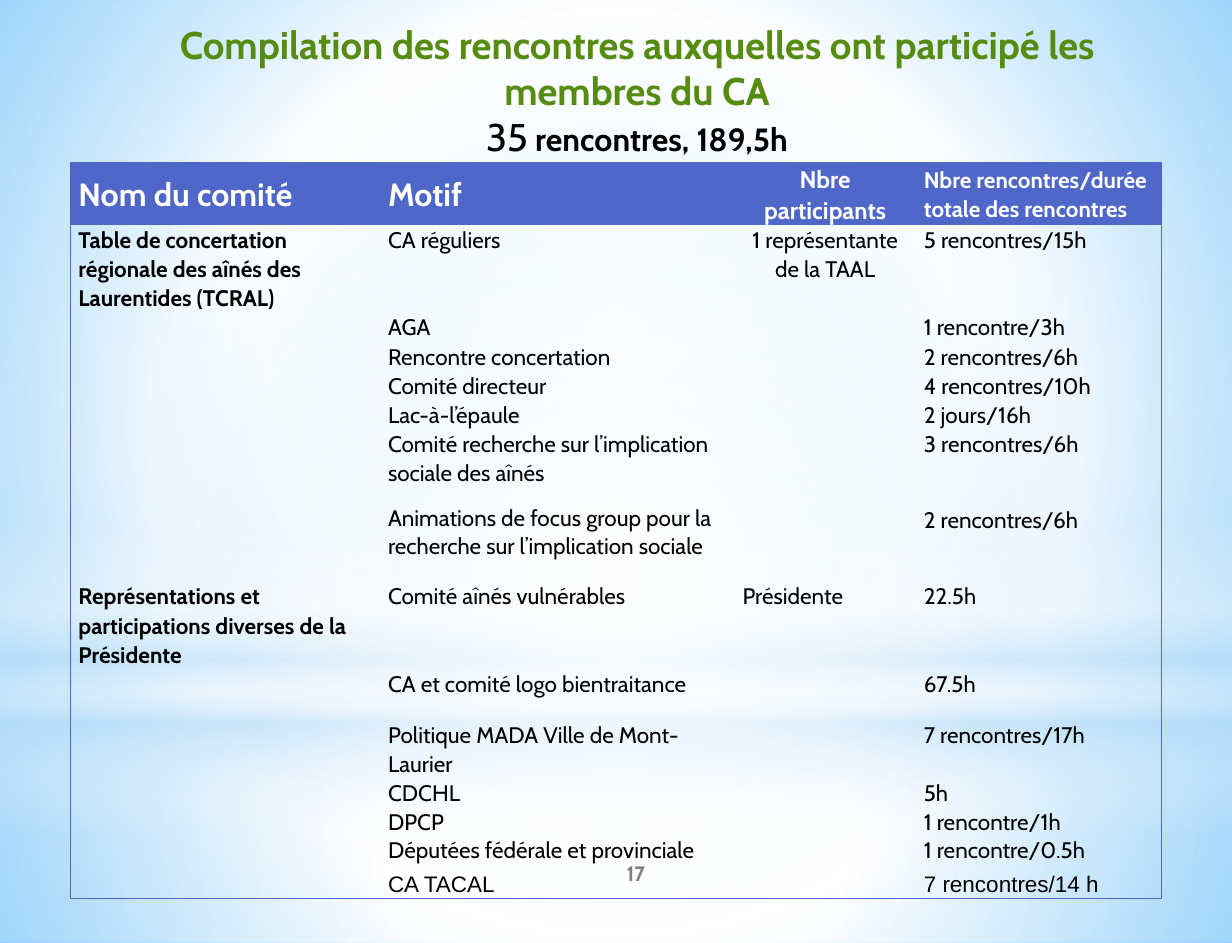
from lxml.etree import SubElement
from pptx import Presentation
from pptx.dml.color import RGBColor
from pptx.enum.shapes import MSO_SHAPE
from pptx.enum.text import MSO_ANCHOR, PP_ALIGN
from pptx.oxml.ns import qn
from pptx.util import Pt

WIDTH, HEIGHT = 768, 588
BLUE, GREEN, BLACK, WHITE, GREY = "4E67C8", "568C11", "000000", "FFFFFF", "7F7F7F"
PLAIN_TABLE = "{2D5ABB26-0587-4C30-8999-92F81FD0307C}"

TITLE = [
    ("Compilation des rencontres auxquelles ont participé les membres du CA\v",
     {"size": 24, "color": GREEN, "bold": True}),
    ("35", {"size": 24}),
    (" rencontres, 189,5h", {"size": 20, "bold": True}),
]
PAGE_NUMBER = [("17", {"size": 13, "color": GREY, "bold": True})]

HEADERS = ["Nom du comité", "Motif", "Nbre participants",
           "Nbre rencontres/durée totale des rencontres"]
HEADER_SIZES = [20, 20, 15, 14]
COLUMN_WIDTHS = [193, 221, 113, 153.4]

MEETINGS = [
    (54.6, "Table de concertation régionale des aînés des Laurentides (TCRAL)",
     "CA réguliers", "1 représentante de la TAAL", "5 rencontres/15h"),
    (18.2, "", "AGA", "", "1 rencontre/3h"),
    (18.2, "", "Rencontre concertation", "", "2 rencontres/6h"),
    (18.2, "", "Comité directeur", "", "4 rencontres/10h"),
    (18.2, "", "Lac-à-l’épaule", "", "2 jours/16h"),
    (47.5, "", "Comité recherche sur l’implication sociale des aînés", "", "3 rencontres/6h"),
    (47.5, "", "Animations de focus group pour la recherche sur l’implication sociale",
     "", "2 rencontres/6h"),
    (54.6, "Représentations et participations diverses de la Présidente",
     "Comité aînés vulnérables", "Présidente", "22.5h"),
    (31.7, "", "CA et comité logo bientraitance", "", "67.5h"),
    (36.4, "", "Politique MADA Ville de Mont-Laurier", "", "7 rencontres/17h"),
    (18.2, "", "CDCHL", "", "5h"),
    (18.2, "", "DPCP", "", "1 rencontre/1h"),
    (20.9, "", "Députées fédérale et provinciale", "", "1 rencontre/0.5h"),
    (17.2, "", "CA TACAL", "", "7 rencontres/14 h"),
]
HEADER_HEIGHT = 38.6
SINGLE_SPACED = {(7, 1), (13, 1), (13, 3)}
CENTERED = {(0, 2), (1, 2)}

BACKDROP = [(0, "99D4FE", 100), (60, WHITE, 100), (100, "54BDFF", 100)]
LAYERS = [
    (MSO_SHAPE.RECTANGLE, 438, 150, None,
     [(0, WHITE, 91), (37, WHITE, 76), (100, "B4DCFA", 79)]),
    (MSO_SHAPE.RECTANGLE, 0, 438, None,
     [(0, WHITE, 89), (48, WHITE, 62), (100, "B4DCFA", 79)]),
    (MSO_SHAPE.RECTANGLE, 323.3, 195.8, 90,
     [(0, WHITE, 0), (29, WHITE, 30), (45, "B4DCFA", 40),
      (55, WHITE, 26), (65, "B4DCFA", 60), (100, WHITE, 0)]),
    (MSO_SHAPE.OVAL, 137.5, 438, None,
     [(0, WHITE, 100), (56, WHITE, 0), (100, WHITE, 0)]),
]


def rgb(color):
    return RGBColor.from_string(color)


def node(parent, tag, **values):
    return SubElement(parent, qn("a:" + tag), {k: str(v) for k, v in values.items()})


def assign(target, values):
    for name, value in values.items():
        setattr(target, name, value)


def set_gradient(owner, fill, stops, angle=None):
    fill.gradient()
    gradient = next(owner.element.iter(qn("a:gradFill")))
    for child in list(gradient):
        gradient.remove(child)
    stop_list = node(gradient, "gsLst")
    for position, color, opacity in stops:
        stop = node(stop_list, "gs", pos=position * 1000)
        shade = node(stop, "srgbClr", val=color)
        if opacity < 100:
            node(shade, "alpha", val=opacity * 1000)
    if angle is None:
        node(node(gradient, "path", path="circle"), "fillToRect",
             l=50000, t=50000, r=50000, b=50000)
    else:
        node(gradient, "lin", ang=angle * 60000, scaled=0)


def write(para, spans):
    for text, look in spans:
        if text.endswith("\v"):
            text, ends_line = text[:-1], True
        else:
            ends_line = False
        span = para.add_run()
        span.text = text
        assign(span.font, {"name": look.get("font", "Cabin"),
                           "size": Pt(look["size"]),
                           "bold": look.get("bold", False)})
        span.font.color.rgb = rgb(look.get("color", BLACK))
        if ends_line:
            para.add_line_break()


def add_text(page, place, spans, anchor):
    frame = page.shapes.add_textbox(*map(Pt, place)).text_frame
    assign(frame, {"word_wrap": True, "vertical_anchor": anchor,
                   "margin_left": Pt(7.9), "margin_right": Pt(7.9),
                   "margin_top": Pt(3.6), "margin_bottom": Pt(3.6)})
    para = frame.paragraphs[0]
    para.alignment = PP_ALIGN.CENTER
    write(para, spans)


def set_borders(cell, row, column, last_row, last_column):
    edges = {"lnL": column == 0, "lnR": column == last_column,
             "lnT": row == 0, "lnB": row % 2 == 0 or row == last_row}
    properties = cell._tc.get_or_add_tcPr()
    for tag, shown in edges.items():
        line = node(properties, tag, w=Pt(0.75))
        if shown:
            node(node(line, "solidFill"), "srgbClr", val=BLUE)
        else:
            node(line, "noFill")


def fill_cell(cell, row, column, text, last_row, last_column):
    header = row == 0
    assign(cell, {"margin_left": Pt(5), "margin_right": Pt(5),
                  "margin_top": 0, "margin_bottom": 0,
                  "vertical_anchor": MSO_ANCHOR.MIDDLE if header else MSO_ANCHOR.TOP})
    set_borders(cell, row, column, last_row, last_column)
    if header:
        cell.fill.solid()
        cell.fill.fore_color.rgb = rgb(BLUE)
    else:
        cell.fill.background()
    para = cell.text_frame.paragraphs[0]
    para.line_spacing = 1.0 if (row, column) in SINGLE_SPACED else 1.07
    para.alignment = PP_ALIGN.CENTER if (row, column) in CENTERED else PP_ALIGN.LEFT
    if text:
        write(para, [(text, {"size": HEADER_SIZES[column] if header else 14,
                             "color": WHITE if header else BLACK,
                             "bold": header or column == 0,
                             "font": "Arial" if row == last_row else "Cabin"})])
    else:
        node(para._p, "endParaRPr", sz=1200)


def add_meetings(page):
    grid = [HEADERS] + [row[1:] for row in MEETINGS]
    heights = [HEADER_HEIGHT] + [row[0] for row in MEETINGS]
    frame = page.shapes.add_table(len(grid), len(HEADERS), Pt(43.9), Pt(101.5),
                                  Pt(sum(COLUMN_WIDTHS)), Pt(sum(heights)))
    table = frame.table
    assign(table, {"first_row": False, "horz_banding": False})
    next(table._tbl.iter(qn("a:tableStyleId"))).text = PLAIN_TABLE
    for column, width in zip(table.columns, COLUMN_WIDTHS):
        column.width = Pt(width)
    for row, height in zip(table.rows, heights):
        row.height = Pt(height)
    for row, texts in enumerate(grid):
        for column, text in enumerate(texts):
            fill_cell(table.cell(row, column), row, column, text,
                      len(grid) - 1, len(HEADERS) - 1)


def main():
    deck = Presentation()
    assign(deck, {"slide_width": Pt(WIDTH), "slide_height": Pt(HEIGHT)})
    page = deck.slides.add_slide(deck.slide_layouts[6])
    set_gradient(page, page.background.fill, BACKDROP)
    for kind, top, height, angle, stops in LAYERS:
        layer = page.shapes.add_shape(kind, 0, Pt(top), Pt(WIDTH), Pt(height))
        layer.shadow.inherit = False
        layer.line.fill.background()
        set_gradient(layer, layer.fill, stops, angle)
    add_text(page, (319.7, 529.2, 153.4, 31), PAGE_NUMBER, MSO_ANCHOR.MIDDLE)
    add_text(page, (56.9, 9.4, 680.4, 73.4), TITLE, MSO_ANCHOR.TOP)
    add_meetings(page)
    deck.save("out.pptx")


if __name__ == "__main__":
    main()
